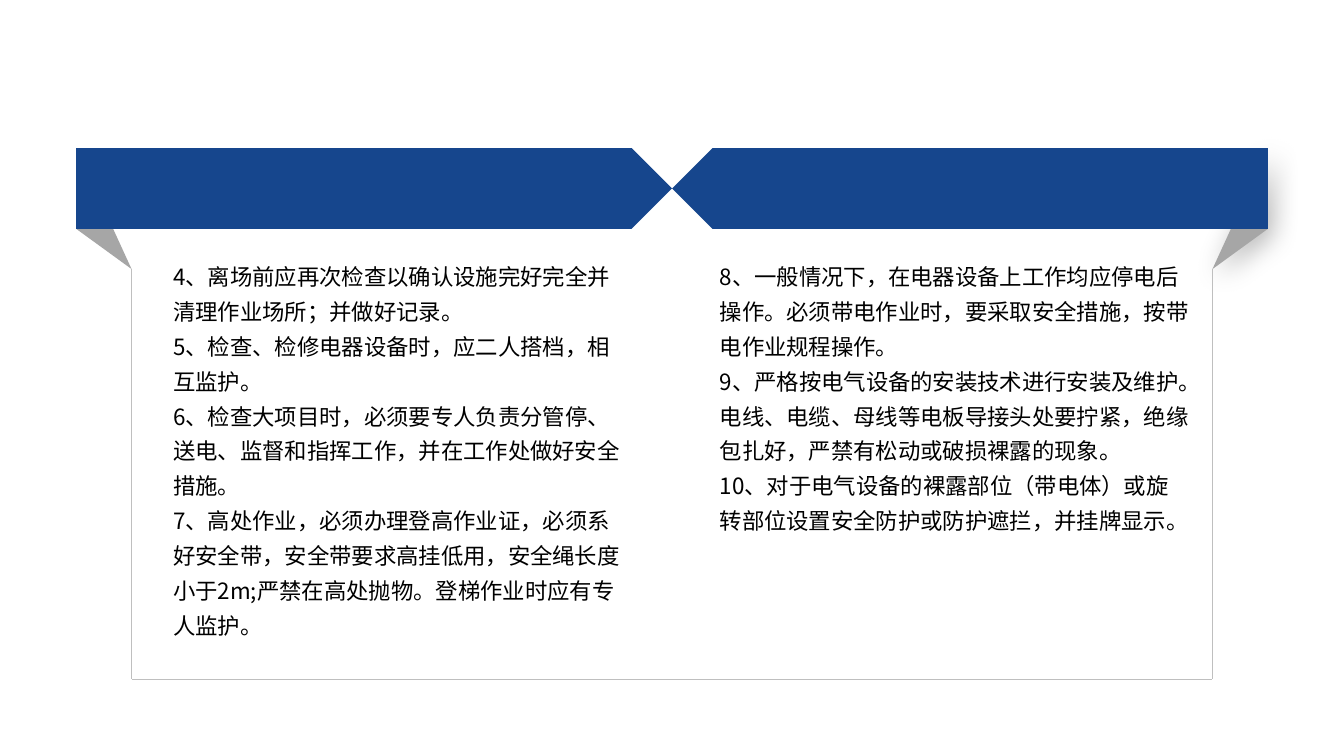
import pptx
import pptx.util
import pptx.dml.color
import pptx.enum.shapes
import pptx.enum.text
import pptx.oxml
import pptx.oxml.ns

LEFT = [
    "4、离场前应再次检查以确认设施完好完全并清理作业场所；并做好记录。",
    "5、检查、检修电器设备时，应二人搭档，相互监护。",
    "6、检查大项目时，必须要专人负责分管停、送电、监督和指挥工作，并在工作处做好安全措施。",
    "7、高处作业，必须办理登高作业证，必须系好安全带，安全带要求高挂低用，安全绳长度小于2m;严禁在高处抛物。登梯作业时应有专人监护。",
]
RIGHT = [
    "8、一般情况下，在电器设备上工作均应停电后操作。必须带电作业时，要采取安全措施，按带电作业规程操作。",
    "9、严格按电气设备的安装技术进行安装及维护。电线、电缆、母线等电板导接头处要拧紧，绝缘包扎好，严禁有松动或破损裸露的现象。",
    "10、对于电气设备的裸露部位（带电体）或旋转部位设置安全防护或防护遮拦，并挂牌显示。",
]
THEME = {
    "font": "Noto Sans CJK JP", "size": 16, "space": 1.3, "rule": 0.5,
    "blue": "16468D", "fold": "A6A6A6", "line": "BFBFBF", "ink": "000000",
}
WIDE, HIGH = 13.33, 7.5
MID = WIDE / 2
BAND, TALL, TOP = 5.91, 0.8, 1.47
EDGE, TIP, BASE = 5.36, 2.67, 6.74
PANELS = [(-1, LEFT, 1.62, 4.64, 3.95), (1, RIGHT, 7.04, 4.87, 2.9)]
GLOW = (
    '<a:effectLst %s><a:outerShdw blurRad="254000" dist="63500" dir="2700000" '
    'algn="tl" rotWithShape="0"><a:srgbClr val="000000"><a:alpha val="30000"/>'
    '</a:srgbClr></a:outerShdw></a:effectLst>' % pptx.oxml.ns.nsdecls("a")
)
BARE = "<a:effectLst %s/>" % pptx.oxml.ns.nsdecls("a")

inch = pptx.util.Inches


def tint(key):
    return pptx.dml.color.RGBColor.from_string(THEME[key])


def paint(shape, key):
    shape.shadow.inherit = False
    shape.fill.solid()
    shape.fill.fore_color.rgb = tint(key)
    shape.line.fill.background()


def fold(slide, side):
    outer = MID + side * BAND
    inner = MID + side * EDGE
    form = slide.shapes.build_freeform(inch(outer), inch(TOP), scale=1.0)
    points = [(inner, TIP), (outer, TOP + TALL)]
    form.add_line_segments([(inch(x), inch(y)) for x, y in points], close=True)
    shape = form.convert_to_shape()
    paint(shape, "fold")
    if side > 0:
        props = shape._element.spPr
        props.remove(props.find(pptx.oxml.ns.qn("a:effectLst")))
        props.append(pptx.oxml.parse_xml(GLOW))


def rule(slide, *ends):
    line = slide.shapes.add_connector(
        pptx.enum.shapes.MSO_CONNECTOR.STRAIGHT, *[inch(v) for v in ends])
    line.line.color.rgb = tint("line")
    line.line.width = pptx.util.Pt(THEME["rule"])
    line._element.spPr.append(pptx.oxml.parse_xml(BARE))


def band(slide, side):
    left = MID - BAND if side < 0 else MID
    shape = slide.shapes.add_shape(
        pptx.enum.shapes.MSO_SHAPE.PENTAGON,
        inch(left), inch(TOP), inch(BAND), inch(TALL))
    paint(shape, "blue")
    shape.rotation = 180 if side > 0 else 0


def write(slide, text, left, top, width, height, size, color, space):
    box = slide.shapes.add_textbox(*[inch(v) for v in (left, top, width, height)])
    frame = box.text_frame
    frame.word_wrap = True
    frame.auto_size = pptx.enum.text.MSO_AUTO_SIZE.SHAPE_TO_FIT_TEXT
    frame.text = "\n".join(text)
    for para in frame.paragraphs:
        para.line_spacing = space
        for run in para.runs:
            run.font.size = pptx.util.Pt(size)
            run.font.name = THEME["font"]
            run.font.color.rgb = tint(color)
            east = pptx.oxml.parse_xml('<a:ea %s typeface="%s"/>' % (
                pptx.oxml.ns.nsdecls("a"), THEME["font"]))
            run.font._element.append(east)


def main():
    deck = pptx.Presentation()
    deck.slide_width, deck.slide_height = inch(WIDE), inch(HIGH)
    slide = deck.slides.add_slide(deck.slide_layouts[6])
    for side, text, left, width, height in PANELS:
        wall = MID + side * EDGE
        fold(slide, side)
        rule(slide, wall, TIP, wall, BASE)
        rule(slide, MID, BASE, wall, BASE)
        band(slide, side)
        write(slide, text, left=left, top=2.48, width=width, height=height,
              size=THEME["size"], color="ink", space=THEME["space"])
    deck.save("out.pptx")


if __name__ == "__main__":
    main()
